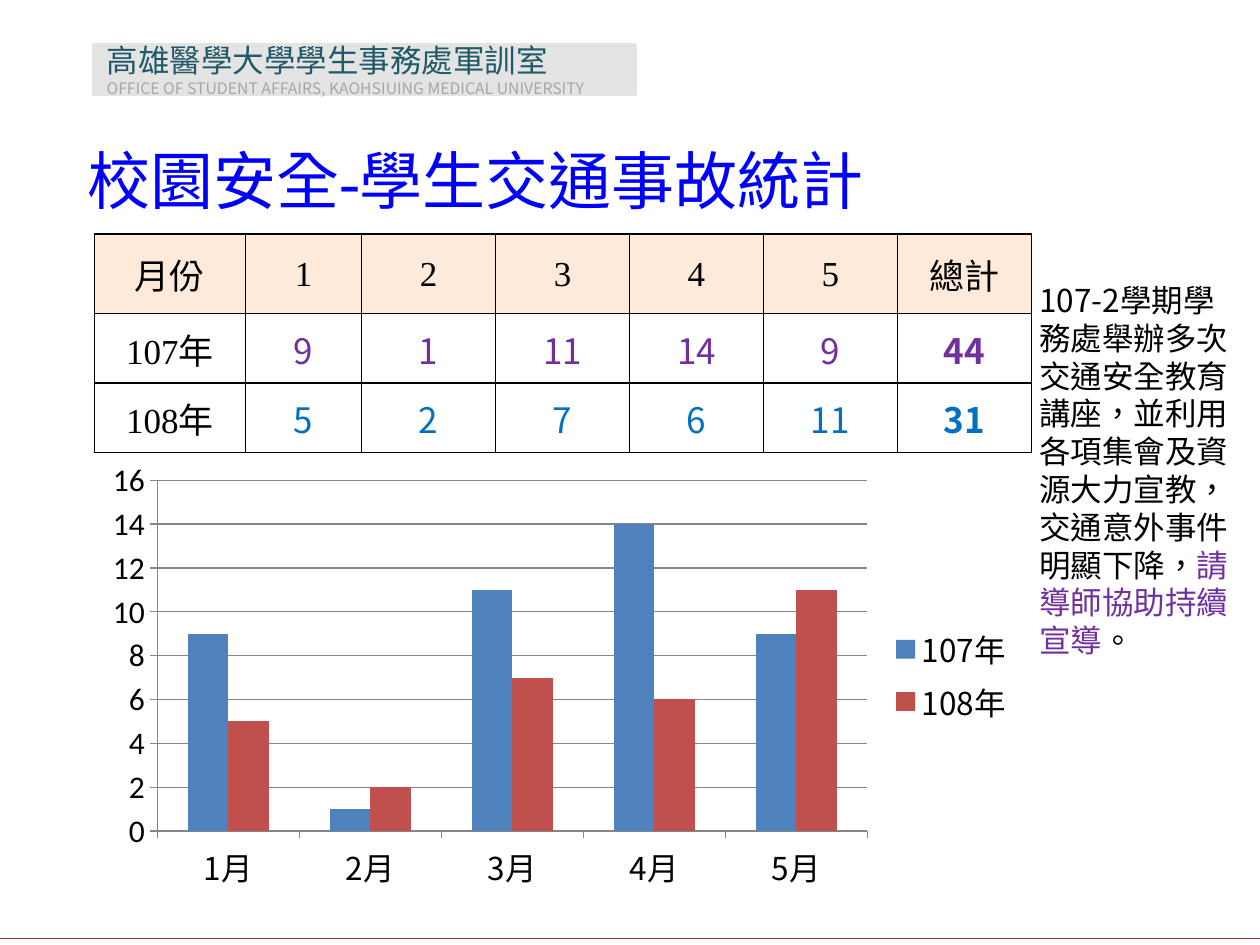
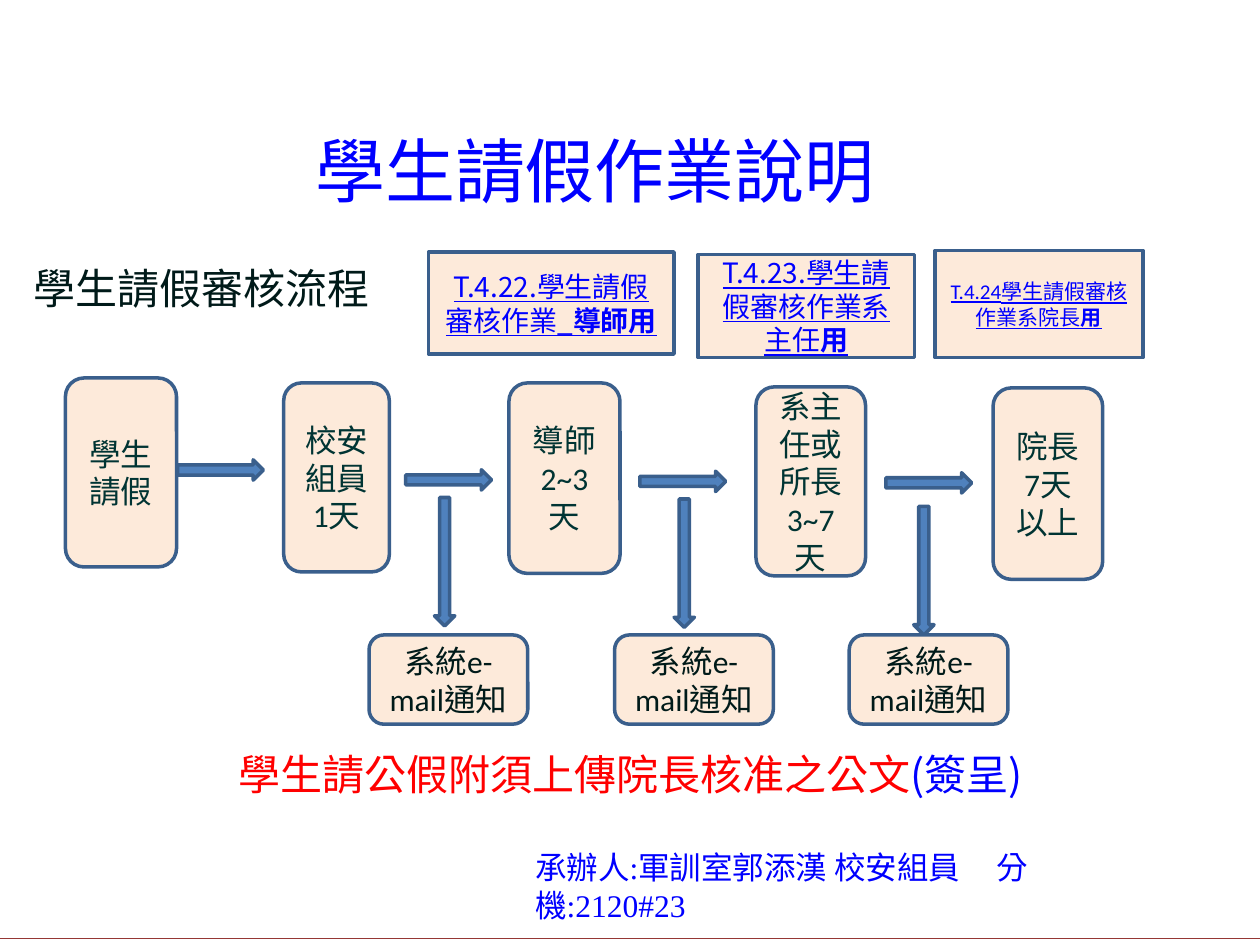
"""Build two slides on campus traffic safety and student leave."""
from lxml.etree import SubElement
from pptx import Presentation
from pptx.chart.data import CategoryChartData as ChartData
from pptx.dml.color import RGBColor as RGB
from pptx.enum.chart import XL_CHART_TYPE as CT, XL_LEGEND_POSITION as LP, XL_TICK_MARK as TM
from pptx.enum.lang import MSO_LANGUAGE_ID as LANG
from pptx.enum.shapes import MSO_CONNECTOR as CON, MSO_SHAPE as SH
from pptx.enum.text import MSO_ANCHOR as ANC, MSO_AUTO_SIZE as AUTO, PP_ALIGN as AL
from pptx.oxml.ns import qn
from pptx.util import Cm, Pt

HUE = {
    "blue": "0000FF", "red": "FF0000", "black": "000000", "plum": "7030A0",
    "sky": "0070C0", "peach": "FDEADA", "bar": "4F81BD", "brick": "C0504D",
    "edge": "3A5F8C", "rule": "953735", "band": "E4E4E4", "teal": "215968",
    "gray": "A6A6A6", "grid": "868686", "pine": "003433", "dark": "001A19",
}
RGBS = {name: RGB.from_string(code) for name, code in HUE.items()}
NOTO, TIMES, CALI = "Noto Sans CJK SC", "Times New Roman", "Calibri"


def write(frame, paras, align=AL.LEFT):
    """Fill a frame with runs of text, size, font, hue and optional marks."""
    frame.word_wrap = True
    for num, runs in enumerate(paras):
        para = frame.add_paragraph() if num else frame.paragraphs[0]
        para.alignment = align
        for text, size, face, hue, *marks in runs:
            run = para.add_run()
            run.text = text
            font = run.font
            font.size, font.name = Pt(size), face
            font.color.rgb = RGBS[hue]
            font.bold, font.underline = "b" in marks, "u" in marks
            font.language_id = LANG.TRADITIONAL_CHINESE
            SubElement(font._element, qn("a:ea"), typeface=NOTO)


def draw(slide, kind, spot, fill, edge, paras=(), align=AL.CENTER):
    """Add a filled shape with its text."""
    shape = slide.shapes.add_shape(kind, *map(Cm, spot))
    shape.shadow.inherit = False
    shape.fill.solid()
    shape.fill.fore_color.rgb = RGBS[fill]
    shape.line.color.rgb = RGBS[edge]
    shape.line.width = Pt(2)
    write(shape.text_frame, paras, align)


deck = Presentation()
deck.slide_width, deck.slide_height = Cm(25.4), Cm(19.05)

heads = [
    ("校園安全-學生交通事故統計", 36, TIMES, (1.5, 2.72, 22.4, 1.8)),
    ("學生請假作業說明", 40, NOTO, (6.1, 2.51, 12.8, 1.8)),
]
for text, size, face, spot in heads:
    slide = deck.slides.add_slide(deck.slide_layouts[5])
    rule = slide.shapes.add_connector(CON.STRAIGHT, 0, Cm(18.92), Cm(25.4), Cm(18.92))
    rule.line.color.rgb = RGBS["rule"]
    rule.line.width = Pt(0.75)
    SubElement(rule._element.spPr, qn("a:effectLst"))
    title = slide.shapes.title
    title.left, title.top, title.width, title.height = map(Cm, spot)
    title.text_frame.auto_size = AUTO.NONE
    title.text_frame.vertical_anchor = ANC.MIDDLE
    write(title.text_frame, [[(text, size, face, "blue")]])

stats, leave = deck.slides

draw(stats, SH.RECTANGLE, (1.9, 0.91, 10.9, 0.99), "band", "band", [
    [("高雄醫學大學學生事務處軍訓室", 18, NOTO, "teal")],
    [("OFFICE OF STUDENT AFFAIRS, KAOHSIUING MEDICAL UNIVERSITY", 9, NOTO, "gray")],
], AL.LEFT)

years = {"107年": (9, 1, 11, 14, 9), "108年": (5, 2, 7, 6, 11)}
rows = [["月份", 1, 2, 3, 4, 5, "總計"]]
rows += [[year, *vals, sum(vals)] for year, vals in years.items()]
table = stats.shapes.add_table(3, 7, Cm(1.9), Cm(4.72), Cm(18.9), Cm(4.4)).table
table.first_row = table.horz_banding = False
for col, width in zip(table.columns, [3.05, 2.34] + [2.7] * 5):
    col.width = Cm(width)
for row, high in zip(table.rows, [1.6, 1.4, 1.4]):
    row.height = Cm(high)
for r, row in enumerate(rows):
    for c, value in enumerate(row):
        cell = table.cell(r, c)
        cell.margin_left = cell.margin_right = Cm(0.18)
        cell.margin_top, cell.margin_bottom = Cm(0.03), 0
        cell.vertical_anchor = ANC.MIDDLE
        for side in ("lnL", "lnR", "lnT", "lnB"):
            line = SubElement(cell._tc.tcPr, qn(f"a:{side}"), w=str(Pt(1)))
            fill = SubElement(line, qn("a:solidFill"))
            SubElement(fill, qn("a:srgbClr"), val=HUE["black"])
        if r:
            cell.fill.background()
        else:
            cell.fill.solid()
            cell.fill.fore_color.rgb = RGBS["peach"]
        count = r and c
        face, hue = (NOTO, ("plum", "sky")[r - 1]) if count else (TIMES, "black")
        marks = ["b"] if count and c == 6 else []
        write(cell.text_frame, [[(str(value), 20, face, hue, *marks)]], AL.CENTER)

note = stats.shapes.add_textbox(Cm(20.7), Cm(5.54), Cm(4.52), Cm(7.95))
write(note.text_frame, [[
    ("107-2學期學務處舉辦多次交通安全教育講座，並利用各項集會及資源大力宣教，交通意外事件明顯下降，",
     18, NOTO, "black"),
    ("請導師協助持續宣導", 18, NOTO, "plum"),
    ("。", 18, NOTO, "black"),
]])

data = ChartData()
data.categories = [f"{month}月" for month in range(1, 6)]
for year, vals in years.items():
    data.add_series(year, vals)
chart = stats.shapes.add_chart(
    CT.COLUMN_CLUSTERED, Cm(1.9), Cm(9.12), Cm(18.8), Cm(8.99), data).chart
chart.has_title = False
chart.font.size, chart.font.name = Pt(18), CALI
chart.font.color.rgb = RGBS["black"]
chart.has_legend = True
chart.legend.position = LP.RIGHT
chart.legend.include_in_layout = False
cats, vals = chart.category_axis, chart.value_axis
for part in (chart.legend, cats.tick_labels):
    part.font.size, part.font.name = Pt(18), NOTO
vals.minimum_scale, vals.maximum_scale, vals.major_unit = 0, 16, 2
vals.has_major_gridlines = True
for part in (cats, vals, vals.major_gridlines):
    part.format.line.color.rgb = RGBS["grid"]
    part.format.line.width = Pt(0.75)
for axis in (cats, vals):
    axis.major_tick_mark, axis.minor_tick_mark = TM.OUTSIDE, TM.NONE
plot = chart.plots[0]
plot.gap_width, plot.overlap, plot.vary_by_categories = 150, 0, False
for bars, hue in zip(plot.series, ("bar", "brick")):
    bars.format.fill.solid()
    bars.format.fill.fore_color.rgb = RGBS[hue]

flow = leave.shapes.add_textbox(Cm(0.42), Cm(5.16), Cm(7.9), Cm(1.27))
write(flow.text_frame, [[("學生請假審核流程", 24, NOTO, "dark")]])

steps = [
    (["學生請假"], (1.32, 7.62, 2.24, 3.81)),
    (["校安組員1天"], (5.72, 7.72, 2.13, 3.81)),
    (["導師2~3天"], (10.26, 7.72, 2.24, 3.84)),
    (["系主任或", "所長3~7天"], (15.24, 7.8, 2.21, 3.81)),
    (["院長7天以上"], (20.02, 7.82, 2.21, 3.86)),
]
for texts, spot in steps:
    paras = [[(text, 18, CALI, "pine")] for text in texts]
    draw(leave, SH.ROUNDED_RECTANGLE, spot, "peach", "edge", paras)

for x, y in [(3.58, 9.27), (8.18, 9.47), (12.9, 9.5), (17.86, 9.53)]:
    draw(leave, SH.RIGHT_ARROW, (x, y, 1.73, 0.41), "bar", "edge")
for x, y, left in [(8.76, 10.03, 7.44), (13.59, 10.06, 12.39), (18.42, 10.21, 17.12)]:
    draw(leave, SH.DOWN_ARROW, (x, y, 0.41, 2.59), "bar", "edge")
    draw(leave, SH.ROUNDED_RECTANGLE, (left, 12.8, 3.2, 1.8), "peach", "edge",
         [[("系統e-mail通知", 18, CALI, "dark")]])

forms = [
    ("T.4.22.學生請假審核作業_", "導師用", 16, NOTO, (8.64, 5.08, 4.95, 2.06)),
    ("T.4.23.學生請假審核作業系主任", "用", 16, NOTO, (14.07, 5.13, 4.37, 2.08)),
    ("T.4.24學生請假審核作業系院長", "用", 12, CALI, (18.85, 5.05, 4.19, 2.16)),
]
for text, tail, size, face, spot in forms:
    draw(leave, SH.RECTANGLE, spot, "peach", "edge", [[
        (text, size, face, "blue", "u"), (tail, size, face, "blue", "u", "b")]])

memo = leave.shapes.add_textbox(Cm(4.55), Cm(14.96), Cm(17.2), Cm(1.27))
write(memo.text_frame, [[
    ("學生請公假附須上傳院長核准之公文", 24, NOTO, "red"),
    ("(簽呈)", 24, NOTO, "blue"),
]])

staff = leave.shapes.add_textbox(Cm(10.54), Cm(16.97), Cm(13.36), Cm(1.02))
staff.text_frame.margin_right = Cm(2.87)
tabs = SubElement(staff.text_frame.paragraphs[0]._p.get_or_add_pPr(), qn("a:tabLst"))
SubElement(tabs, qn("a:tab"), pos=str(Cm(9.3)), algn="l")
write(staff.text_frame, [[
    ("承辦人:軍訓室郭添漢 校安組員\t分機:2120#23", 18, TIMES, "blue")]])

deck.save("out.pptx")
